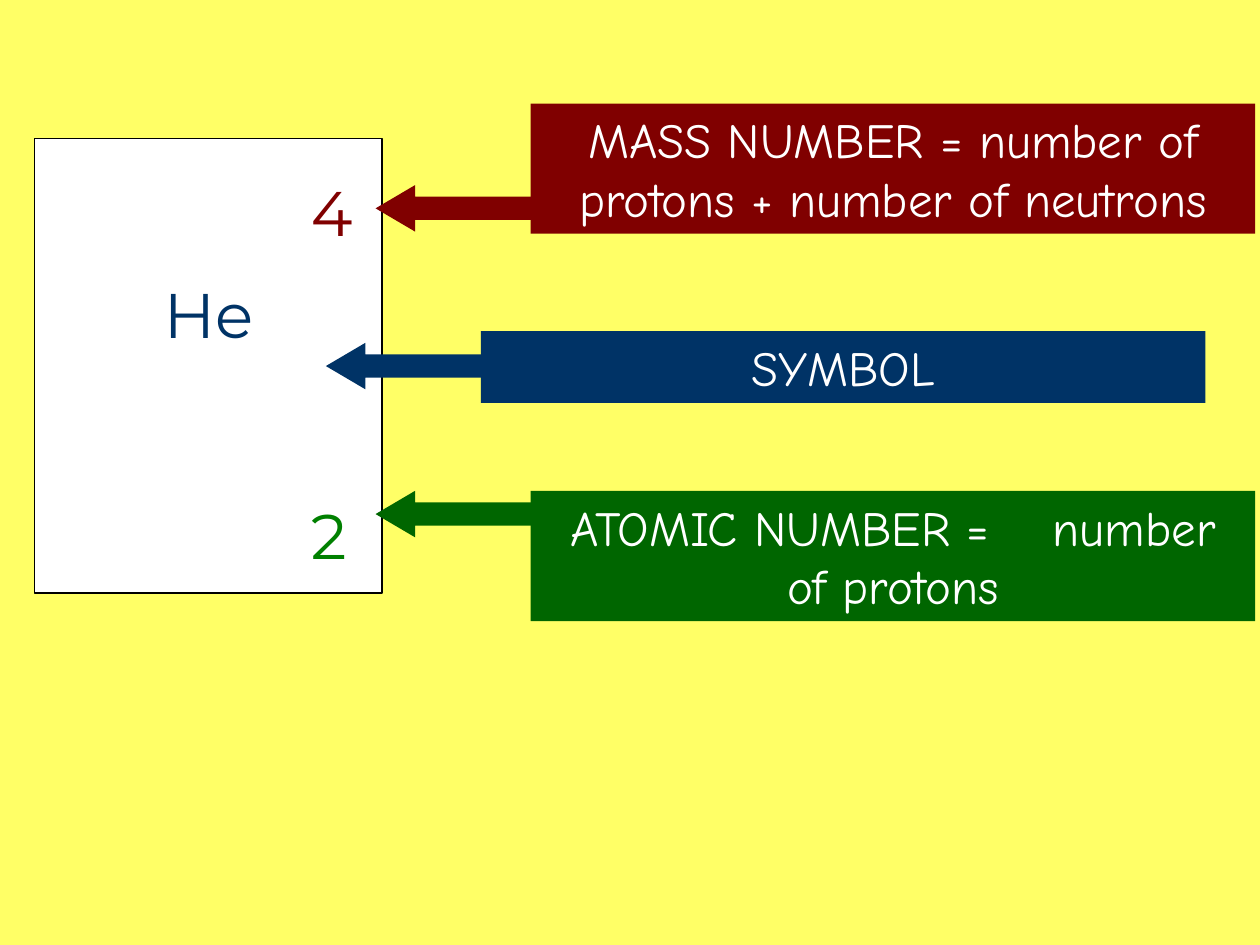
from pptx import Presentation
from pptx.dml.color import RGBColor
from pptx.enum import shapes, text
from pptx.util import Pt

YELLOW = RGBColor(0xFF, 0xFF, 0x66)
WHITE = RGBColor(0xFF, 0xFF, 0xFF)
BLACK = RGBColor(0x00, 0x00, 0x00)
RED = RGBColor(0x80, 0x00, 0x00)
NAVY = RGBColor(0x00, 0x33, 0x66)
GREEN = RGBColor(0x00, 0x80, 0x00)
DARK_GREEN = RGBColor(0x00, 0x66, 0x00)

LABEL_WIDTH = 414
ARROW_WIDTH, ARROW_HEIGHT = 90, 26.6
ARROW_OFFSET = 88.6  # from the arrow tip to the left edge of its label

# Text, left, top, width, height, colour
CARD_ENTRIES = [
    ("He", 75.6, 154, 87.1, 105, NAVY),
    ("2", 170.6, 280, 31.7, 37.4, GREEN),
    ("4", 170.6, 95.8, 31.7, 41.8, RED),
]
# Text pieces (split at the wide gap), left, top, height, arrow top, colour
CALLOUTS = [
    (["MASS NUMBER = number of protons + number of neutrons"],
     303.2, 59.2, 74.4, 105.8, RED),
    (["SYMBOL"], 274.8, 189.2, 41, 195.9, NAVY),
    (["ATOMIC NUMBER =", "number of protons"],
     303.2, 280.5, 74.4, 280.5, DARK_GREEN),
]


def add_filled(group, preset, left, top, width, height, color):
    shape = group.shapes.add_shape(
        preset, Pt(left), Pt(top), Pt(width), Pt(height))
    shape.shadow.inherit = False
    shape.fill.solid()
    shape.fill.fore_color.rgb = color
    shape.line.fill.background()
    return shape


def add_run(paragraph, wording, font, size, color):
    run = paragraph.add_run()
    run.text = wording
    run.font.name = font
    run.font.size = Pt(size)
    run.font.color.rgb = color
    return run


def add_card_entry(group, wording, left, top, width, height, color):
    entry = group.shapes.add_textbox(Pt(left), Pt(top), Pt(width), Pt(height))
    entry.text_frame.word_wrap = False
    paragraph = entry.text_frame.paragraphs[0]
    paragraph.alignment = text.PP_ALIGN.CENTER
    add_run(paragraph, wording, "Montserrat", 36, color)


def add_callout(slide, pieces, left, top, height, arrow_top, color):
    callout = slide.shapes.add_group_shape()
    label = add_filled(callout, shapes.MSO_SHAPE.RECTANGLE,
                       left, top, LABEL_WIDTH, height, color)
    frame = label.text_frame
    frame.word_wrap = True
    frame.auto_size = text.MSO_AUTO_SIZE.SHAPE_TO_FIT_TEXT
    frame.vertical_anchor = text.MSO_ANCHOR.TOP
    paragraph = frame.paragraphs[0]
    paragraph.alignment = text.PP_ALIGN.CENTER
    for index, piece in enumerate(pieces):
        if index:
            # One space, widened by character spacing
            gap = add_run(paragraph, " ", "Comic Neue", 28, WHITE)
            gap.font._element.set("spc", "2700")
        add_run(paragraph, piece, "Comic Neue", 28, WHITE)

    arrow = add_filled(callout, shapes.MSO_SHAPE.LEFT_ARROW,
                       left - ARROW_OFFSET, arrow_top,
                       ARROW_WIDTH, ARROW_HEIGHT, color)
    arrow.adjustments[0] = 0.5
    arrow.adjustments[1] = 0.85


def add_element_card(slide):
    card = slide.shapes.add_group_shape()
    panel = add_filled(card, shapes.MSO_SHAPE.RECTANGLE,
                       19.6, 79, 198.7, 260, WHITE)
    panel.line.color.rgb = BLACK
    panel.line.width = Pt(0.75)
    for entry in CARD_ENTRIES:
        add_card_entry(card, *entry)


def main():
    prs = Presentation()
    prs.slide_width, prs.slide_height = Pt(720), Pt(540)
    slide = prs.slides.add_slide(prs.slide_layouts[6])
    slide.background.fill.solid()
    slide.background.fill.fore_color.rgb = YELLOW

    # Helium card, then the explanations pointing at it
    add_element_card(slide)
    for callout in CALLOUTS:
        add_callout(slide, *callout)
    prs.save("out.pptx")


if __name__ == "__main__":
    main()
